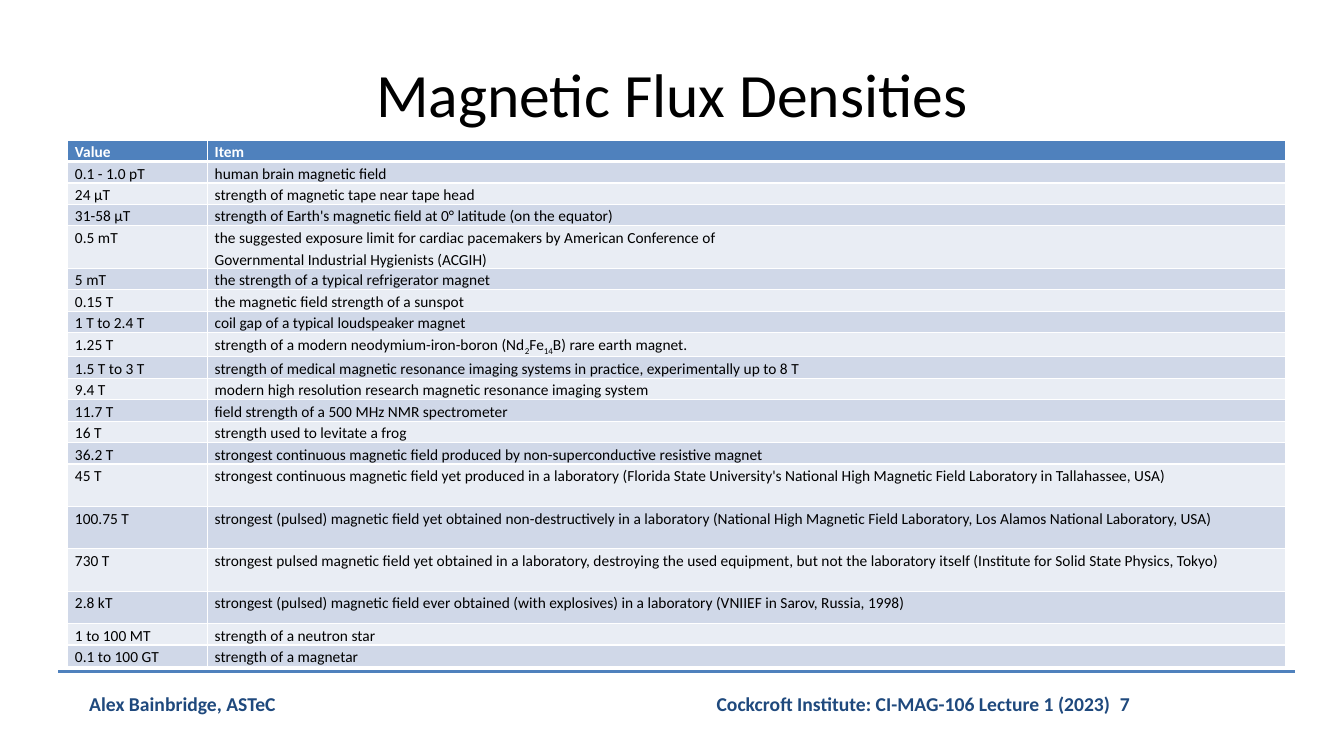
from dataclasses import dataclass

from lxml.etree import SubElement
from pptx import Presentation
from pptx.dml.color import RGBColor
from pptx.enum.shapes import MSO_CONNECTOR as Connector
from pptx.enum.text import MSO_ANCHOR as Anchor, PP_ALIGN as Align
from pptx.oxml.ns import qn
from pptx.util import Cm, Pt


@dataclass(frozen=True)
class Theme:
    font: str = "Calibri"
    title_size: int = 44
    footer_size: int = 14
    table_size: int = 11
    black: str = "000000"
    white: str = "FFFFFF"
    navy: str = "1F497D"
    blue: str = "4F81BD"
    bands: tuple = ("D0D8E8", "E9EDF4")


THEME = Theme()
SINGLE, MEDIUM, DOUBLE = 0.54, 0.81, 1.07  # row heights in cm
SUBSCRIPT_MARK = "~"  # encloses subscripts in the table text

ROWS = [
    ("Value", "Item", SINGLE),
    ("0.1 - 1.0 pT", "human brain magnetic field", SINGLE),
    ("24 µT", "strength of magnetic tape near tape head", SINGLE),
    ("31-58 µT", "strength of Earth's magnetic field at 0° latitude (on the equator)", SINGLE),
    ("0.5 mT", "the suggested exposure limit for cardiac pacemakers by American Conference of\n"
               "Governmental Industrial Hygienists (ACGIH)", DOUBLE),
    ("5 mT", "the strength of a typical refrigerator magnet", SINGLE),
    ("0.15 T", "the magnetic field strength of a sunspot", SINGLE),
    ("1 T to 2.4 T", "coil gap of a typical loudspeaker magnet", SINGLE),
    ("1.25 T", "strength of a modern neodymium-iron-boron (Nd~2~Fe~14~B) rare earth magnet.", SINGLE),
    ("1.5 T to 3 T", "strength of medical magnetic resonance imaging systems in practice, "
                     "experimentally up to 8 T", SINGLE),
    ("9.4 T", "modern high resolution research magnetic resonance imaging system", SINGLE),
    ("11.7 T", "field strength of a 500 MHz NMR spectrometer", SINGLE),
    ("16 T", "strength used to levitate a frog", SINGLE),
    ("36.2 T", "strongest continuous magnetic field produced by non-superconductive "
               "resistive magnet", SINGLE),
    ("45 T", "strongest continuous magnetic field yet produced in a laboratory (Florida State "
             "University's National High Magnetic Field Laboratory in Tallahassee, USA)", DOUBLE),
    ("100.75 T", "strongest (pulsed) magnetic field yet obtained non-destructively in a laboratory "
                 "(National High Magnetic Field Laboratory, Los Alamos National Laboratory, USA)", DOUBLE),
    ("730 T", "strongest pulsed magnetic field yet obtained in a laboratory, destroying the used "
              "equipment, but not the laboratory itself (Institute for Solid State Physics, Tokyo)", DOUBLE),
    ("2.8 kT", "strongest (pulsed) magnetic field ever obtained (with explosives) in a laboratory "
               "(VNIIEF in Sarov, Russia, 1998)", MEDIUM),
    ("1 to 100 MT", "strength of a neutron star", SINGLE),
    ("0.1 to 100 GT", "strength of a magnetar", SINGLE),
]


def style_span(span, size, color, bold=False):
    font = span.font
    font.name, font.size, font.bold = THEME.font, Pt(size), bold
    font.color.rgb = RGBColor.from_string(color)


def add_title(page, left, top, width, height):
    title = page.shapes.title
    title.left, title.top, title.width, title.height = left, top, width, height
    frame = title.text_frame
    frame.text = "Magnetic Flux Densities"
    frame.vertical_anchor = Anchor.MIDDLE
    para = frame.paragraphs[0]
    para.alignment = Align.CENTER
    style_span(para.runs[0], THEME.title_size, THEME.black)


def add_footer_text(page, text, alignment, left, top, width, height):
    box = page.shapes.add_textbox(left, top, width, height)
    box.text_frame.word_wrap = True
    box.text_frame.text = text
    para = box.text_frame.paragraphs[0]
    para.alignment = alignment
    style_span(para.runs[0], THEME.footer_size, THEME.navy, bold=True)


def add_footer(page, left, top, width):
    """Draw the rule at the top of the box, with both footer texts below it."""
    rule = page.shapes.add_connector(Connector.STRAIGHT, left, top, left + width, top)
    rule.line.color.rgb = RGBColor.from_string(THEME.blue)
    rule.line.width = Pt(2)
    SubElement(rule._element.spPr, qn("a:effectLst"))

    text_top, text_height = top + Cm(0.4), Cm(0.86)
    add_footer_text(page, "Alex Bainbridge, ASTeC", Align.LEFT,
                    left + Cm(0.53), text_top, Cm(13.06), text_height)
    lecture_width = Cm(18.75)
    add_footer_text(page, "Cockcroft Institute: CI-MAG-106 Lecture 1 (2023)\t7", Align.CENTER,
                    left + width - lecture_width, text_top, lecture_width, text_height)


def add_borders(cell, top, bottom):
    """Give the cell white borders; top and bottom are widths in points."""
    properties = cell._tc.get_or_add_tcPr()
    for side, width in (("L", 1), ("R", 1), ("T", top), ("B", bottom)):
        line = SubElement(properties, qn(f"a:ln{side}"), w=str(Pt(width)))
        fill = SubElement(line, qn("a:solidFill"))
        SubElement(fill, qn("a:srgbClr"), val=THEME.white)


def fill_cell(cell, text, row_number):
    is_header = row_number == 0
    add_borders(cell, 3 if row_number == 1 else 1, 3 if is_header else 1)
    cell.fill.solid()
    fill_color = THEME.blue if is_header else THEME.bands[(row_number - 1) % 2]
    cell.fill.fore_color.rgb = RGBColor.from_string(fill_color)
    cell.margin_left = cell.margin_right = Cm(0.19)
    cell.margin_top = cell.margin_bottom = 0

    frame = cell.text_frame
    frame.text = text
    for para in frame.paragraphs:
        para.line_spacing = 1.15
        pieces = para.text.split(SUBSCRIPT_MARK)
        para.text = pieces[0]
        for piece in pieces[1:]:
            para.add_run().text = piece
        for number, span in enumerate(para.runs):
            style_span(span, THEME.table_size,
                       THEME.white if is_header else THEME.black, is_header)
            if number % 2:
                span.font._element.set("baseline", "-25000")


def add_flux_table(page, left, top, width):
    height = Cm(sum(row_height for _, _, row_height in ROWS))
    table = page.shapes.add_table(len(ROWS), 2, left, top, width, height).table
    value_width = Cm(3.52)
    table.columns[0].width = value_width
    table.columns[1].width = width - value_width
    for number, (value, item, row_height) in enumerate(ROWS):
        table.rows[number].height = Cm(row_height)
        fill_cell(table.cell(number, 0), value, number)
        fill_cell(table.cell(number, 1), item, number)


def main():
    deck = Presentation()
    deck.slide_width, deck.slide_height = Cm(33.87), Cm(19.05)
    page = deck.slides.add_slide(deck.slide_layouts.get_by_name("Title Only"))
    add_footer(page, Cm(1.47), Cm(16.92), Cm(31.17))
    add_title(page, Cm(1.7), Cm(0.76), Cm(30.48), Cm(3.18))
    add_flux_table(page, Cm(1.7), Cm(3.53), Cm(30.7))
    deck.save("out.pptx")


if __name__ == "__main__":
    main()
